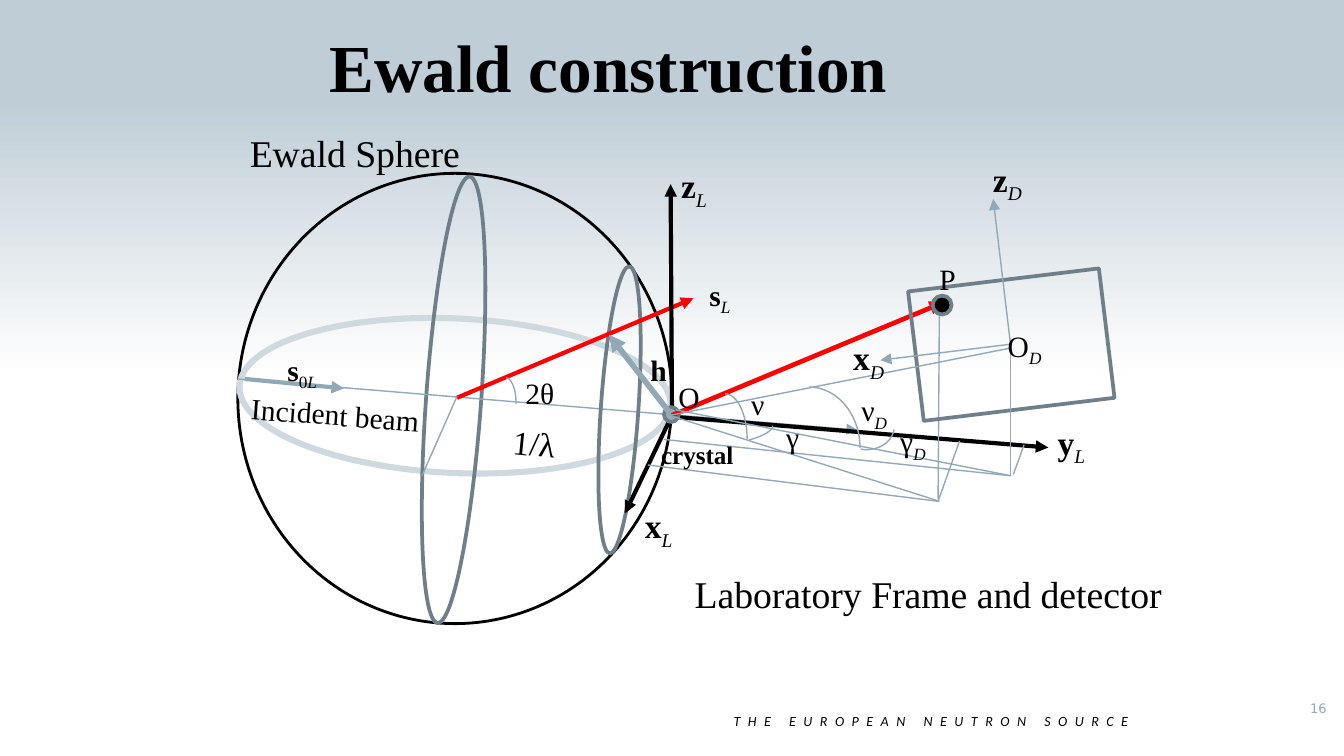
"""Build the Ewald construction slide on a 16:9 grid 1000 columns wide."""
import lxml.etree
import pptx
import pptx.dml.color
import pptx.enum.shapes
import pptx.enum.text
import pptx.oxml.ns
import pptx.util


def grid(*cells):
    return [pptx.util.Inches(cell / 100) for cell in cells]


def ink(hue):
    return pptx.dml.color.RGBColor.from_string(hue)


qn = pptx.oxml.ns.qn
kinds = pptx.enum.shapes.MSO_SHAPE
align = pptx.enum.text.PP_ALIGN

deck = pptx.Presentation()
deck.slide_width, deck.slide_height = grid(1000, 1000 * 9 / 16)
slide = deck.slides.add_slide(deck.slide_layouts[5])

back = slide.background.fill
back.gradient()
back.gradient_angle = 270
for stop, place, hue in zip(back.gradient_stops, (0.13, 0.5), ("BFCDD6", "FFFFFF")):
    stop.position = place
    stop.color.rgb = ink(hue)

black, red, steel, slate, pale = "000000", "FF0000", "91A8B7", "6E7F8A", "CFDAE0"
oval, arc, rect = kinds.OVAL, kinds.ARC, kinds.RECTANGLE
line, arrow = "line", "arrow"

parts = [
    (oval, 177, 129, 323, 335, black, 1.5, 0, None),
    (oval, 178, 237, 321, 115, pale, 3.25, 2.6, None),
    (oval, 317, 131, 41, 333, slate, 2, 4.1, None),
    (arrow, 177, 282, 638, 320, steel, 0.75),
    (oval, 447, 198, 28, 214, slate, 2, 3.9, None),
    (arrow, 340, 296, 516, 222, red, 2.25),
    (arrow, 500, 309, 499, 137, black, 2.25),
    (arrow, 499, 310, 780, 333, black, 2.25),
    (arrow, 500, 309, 465, 382, black, 2.25),
    (arrow, 182, 282, 256, 289, steel, 2.25),
    (line, 340, 295, 314, 354, steel, 0.75),
    (oval, 494, 303, 11, 11, slate, 2, 0, "95ACBA"),
    (arrow, 499, 308, 453, 249, steel, 3),
    (arc, 369, 281, 15, 39, steel, 0.75, 0, None),
    (arrow, 500, 309, 702, 225, red, 2.5),
    (line, 699, 225, 698, 371, steel, 0.75),
    (line, 498, 309, 699, 373, steel, 0.75),
    (rect, 681, 208, 143, 97, slate, 2, 353.1, None),
    (arrow, 752, 257, 739, 148, steel, 0.75),
    (arrow, 753, 256, 655, 268, steel, 0.75),
    (oval, 694, 220, 14, 14, slate, 2, 0, black),
    (arc, 523, 293, 33, 68, steel, 0.75, 0, None),
    (arc, 550, 302, 12, 39, steel, 0.75, 76, None),
    (line, 752, 256, 752, 354, steel, 0.75),
    (line, 503, 305, 752, 354, steel, 0.75),
    (line, 499, 309, 752, 259, steel, 0.75),
    (arc, 564, 288, 76, 91, steel, 0.75, 0, None),
    (arc, 625, 294, 37, 44, steel, 0.75, 99.7, None),
    (line, 698, 373, 482, 346, steel, 0.75),
    (line, 752, 354, 494, 327, steel, 0.75),
    (line, 698, 373, 714, 328, steel, 0.75),
    (line, 754, 353, 762, 331, steel, 0.75),
]
for kind, left, top, wide, high, hue, width, *rest in parts:
    cells = grid(left, top, wide, high)
    if kind in (line, arrow):
        part = slide.shapes.add_connector(pptx.enum.shapes.MSO_CONNECTOR.STRAIGHT, *cells)
    else:
        part = slide.shapes.add_shape(kind, *cells)
        part.shadow.inherit = False
        part.rotation, fill = rest
        if fill:
            part.fill.solid()
            part.fill.fore_color.rgb = ink(fill)
        else:
            part.fill.background()
    part.line.color.rgb = ink(hue)
    part.line.width = pptx.util.Pt(width)
    if kind in (line, arrow):
        props = part._element.spPr
        if kind == arrow:
            lxml.etree.SubElement(props.find(qn("a:ln")), qn("a:tailEnd"), type="triangle")
        lxml.etree.SubElement(props, qn("a:effectLst"))

plain = (black, {"name": "Times New Roman", "bold": False})
strong = (black, {"name": "Times New Roman", "bold": True})
page = ("95ACBA", {"name": "DejaVu Sans"})
motto = (black, {"name": "Calibri", "italic": True})

labels = [
    ("Ewald construction", "", 235, 14, 440, 36, 0, False, strong),
    ("Ewald Sphere", "", 176, 92, 179, 20.2, 0, False, plain),
    ("Laboratory Frame and detector", "", 507, 420, 373, 20.2, 0, False, plain),
    ("z", "L", 497, 118, 41, 18, 0, False, strong),
    ("y", "L", 777, 309, 42, 18, 0, False, strong),
    ("x", "L", 470, 371, 42, 18, 0, False, strong),
    ("x", "D", 625, 246, 45, 18, 0, False, strong),
    ("z", "D", 729, 113, 44, 18, 0, False, strong),
    ("Incident beam", "", 177, 290, 146, 15.8, 4.3, False, plain),
    ("1/λ", "", 372, 310, 58, 18, 5.8, True, plain),
    ("s", "L", 518, 201, 46, 15.8, 0, True, strong),
    ("s", "0L", 204, 257, 51, 15.8, 0, True, strong),
    ("2θ", "", 381, 274, 45, 15.8, 0, True, plain),
    ("h", "", 474, 257, 32, 15.8, 0, True, strong),
    ("crystal", "", 482, 322, 75, 13.5, 0, False, strong),
    ("O", "D", 740, 239, 47, 15.8, 0, False, plain),
    ("γ", "", 575, 307, 29, 15.8, 0, False, plain),
    ("ν", "", 549, 282, 32, 15.8, 0, False, plain),
    ("P", "", 689, 189, 32, 15.8, 0, False, plain),
    ("ν", "D", 631, 287, 42, 15.8, 0, False, plain),
    ("γ", "D", 660, 310, 40, 15.8, 0, False, plain),
    ("O", "", 495, 277, 36, 15.8, 0, False, plain),
    ("16", "", 965, 516, 47, 7, 0, True, page),
    ("THE EUROPEAN NEUTRON SOURCE", "", 510, 525, 365, 7.5, 0, True, motto),
]
for main, sub, left, top, wide, size, turn, wrap, (hue, style) in labels:
    cells = grid(left, top, wide, 1.67 * size + 10)
    if size == 36:
        box = slide.shapes.title
        box.left, box.top, box.width, box.height = cells
    else:
        box = slide.shapes.add_textbox(*cells)
    box.rotation = turn
    frame = box.text_frame
    frame.word_wrap = wrap
    frame.auto_size = pptx.enum.text.MSO_AUTO_SIZE.SHAPE_TO_FIT_TEXT
    frame.vertical_anchor = pptx.enum.text.MSO_ANCHOR.TOP
    para = frame.paragraphs[0]
    para.alignment = align.CENTER if style is motto[1] else align.LEFT
    for spot, text in enumerate([main, *sub]):
        run = para.add_run()
        run.text = text
        extra = {"bold": False, "italic": text.isalpha()} if spot else {}
        look = {"size": pptx.util.Pt(size)} | style | extra
        for key, value in look.items():
            setattr(run.font, key, value)
        run.font.color.rgb = ink(hue)
        if spot:
            run._r.get_or_add_rPr().set("baseline", "-25000")
        if style is motto[1]:
            run._r.get_or_add_rPr().set("spc", "400")

deck.save("out.pptx")
